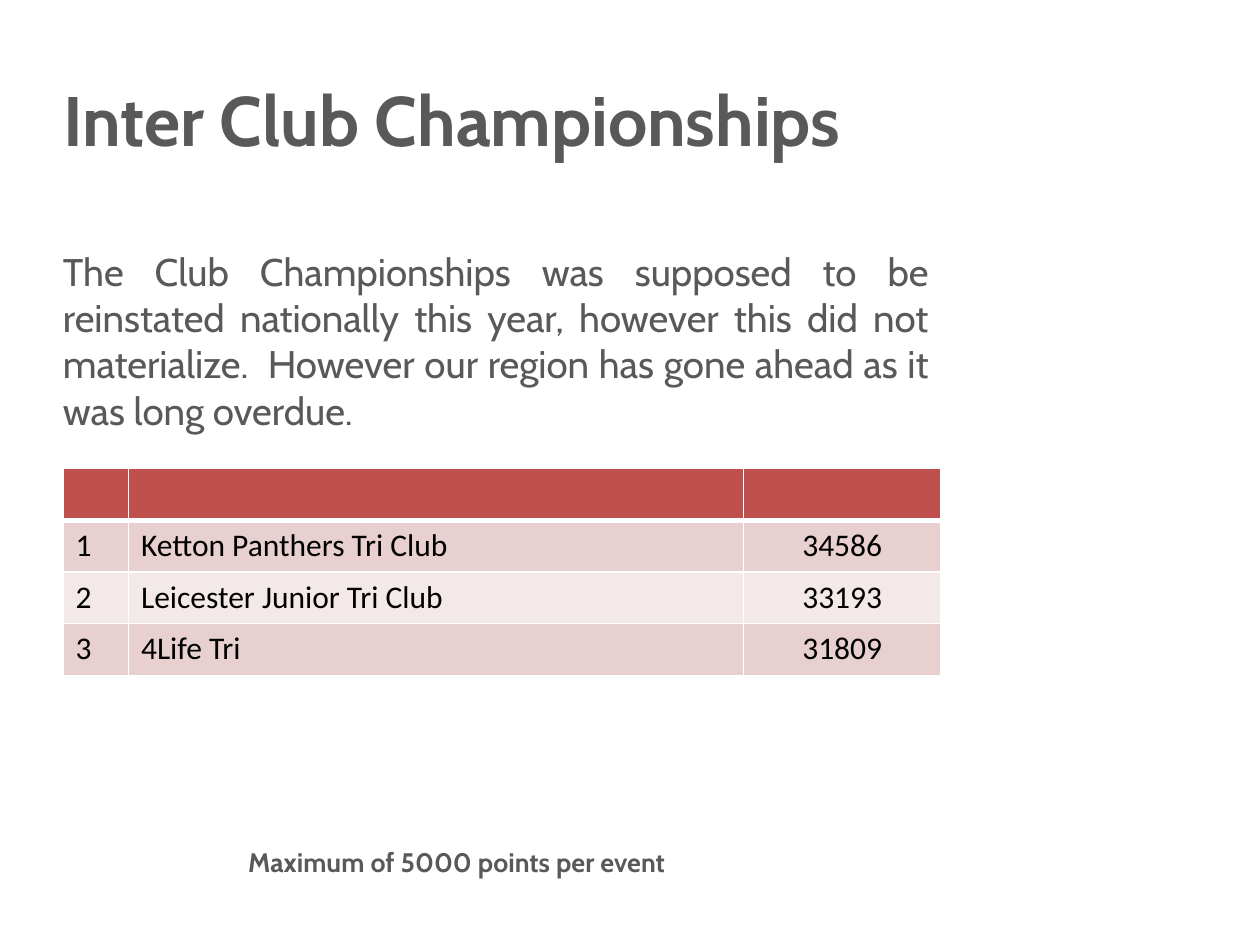
from lxml.etree import SubElement
from pptx import Presentation
from pptx.dml.color import RGBColor
from pptx.enum.text import MSO_ANCHOR, MSO_AUTO_SIZE, PP_ALIGN
from pptx.oxml.ns import qn
from pptx.util import Inches, Pt


def color(value):
    """Turn a hex string into a colour."""
    return RGBColor.from_string(value)


def write(frame, text, size=18, font="Cabin", ink="595959", bold=False,
          align=PP_ALIGN.LEFT, spacing=None):
    """Write one formatted paragraph into a text frame."""
    paragraph = frame.paragraphs[0]
    paragraph.alignment = align
    paragraph.line_spacing = spacing
    if not text:
        paragraph.font.size = Pt(size)
        return
    run = paragraph.add_run()
    run.text = text
    run.font.size = Pt(size)
    run.font.name = font
    run.font.bold = bold
    run.font.color.rgb = color(ink)


class SlideBuilder:
    """Hold the table style and the slide being built."""

    header_fill = "C0504D"
    band_fills = ("E8D0D0", "F4E9E9")
    border = "FFFFFF"

    def __init__(self, deck):
        """Add a title-only slide to the deck."""
        self.slide = deck.slides.add_slide(deck.slide_layouts[5])

    def frame_up(self, frame, anchor, left_inset):
        """Set the wrapping, anchor and left inset of a text frame."""
        frame.word_wrap = True
        frame.auto_size = MSO_AUTO_SIZE.NONE
        frame.vertical_anchor = anchor
        frame.margin_left = Inches(left_inset)

    def title(self, text, left, top, width, height):
        """Place and fill the title placeholder."""
        heading = self.slide.shapes.title
        heading.left, heading.top = Inches(left), Inches(top)
        heading.width, heading.height = Inches(width), Inches(height)
        self.frame_up(heading.text_frame, MSO_ANCHOR.MIDDLE, 0)
        write(heading.text_frame, text, size=40, bold=True, spacing=0.8)

    def text(self, text, left, top, width, height, left_inset=0.1, **style):
        """Add a wrapped text box."""
        box = self.slide.shapes.add_textbox(
            Inches(left), Inches(top), Inches(width), Inches(height))
        self.frame_up(box.text_frame, MSO_ANCHOR.TOP, left_inset)
        write(box.text_frame, text, **style)

    def rule(self, cell, edge, width):
        """Draw one border of a cell ahead of its fill."""
        properties = cell._tc.get_or_add_tcPr()
        line = SubElement(properties, qn(f"a:ln{edge}"), w=str(Pt(width)))
        fill = SubElement(line, qn("a:solidFill"))
        SubElement(fill, qn("a:srgbClr"), val=self.border)

    def table(self, rows, left, top, columns, row_height):
        """Add a banded table with a header row and a centred last column."""
        grid = self.slide.shapes.add_table(
            len(rows), len(columns), Inches(left), Inches(top),
            Inches(sum(columns)), Inches(row_height * len(rows))).table
        for column, width in zip(grid.columns, columns):
            column.width = Inches(width)
        for row_index, row in enumerate(rows):
            for column_index, value in enumerate(row):
                cell = grid.cell(row_index, column_index)
                for edge in "LRTB":
                    heavy = (row_index, edge) in ((0, "B"), (1, "T"))
                    self.rule(cell, edge, 3 if heavy else 1)
                cell.fill.solid()
                cell.fill.fore_color.rgb = color(
                    self.band_fills[(row_index - 1) % 2] if row_index
                    else self.header_fill)
                last = column_index == len(columns) - 1
                write(cell.text_frame, value, font="Calibri", ink="000000",
                      align=PP_ALIGN.CENTER if last else PP_ALIGN.LEFT)


def main():
    """Build the championship slide and save it."""
    deck = Presentation()
    deck.slide_width, deck.slide_height = Inches(10), Inches(7.5)
    page = SlideBuilder(deck)
    page.title("Inter Club Championships", 0.5, 0.38, 9, 1.25)
    page.text(
        "The Club Championships was supposed to be reinstated nationally this "
        "year, however this did not materialize.  However our region has gone "
        "ahead as it was long overdue.",
        0.5, 1.92, 6.97, 3.44, left_inset=0, size=22, align=PP_ALIGN.JUSTIFY)
    page.text("Maximum of 5000 points per event", 1.87, 6.66, 4.02, 0.39,
              size=15.3, bold=True)
    standings = [
        ("", "", ""),
        ("1", "Ketton Panthers Tri Club", "34586"),
        ("2", "Leicester Junior Tri Club", "33193"),
        ("3", "4Life Tri", "31809"),
    ]
    page.table(standings, 0.5, 3.72, (0.52, 4.88, 1.57), 0.41)
    deck.save("out.pptx")


if __name__ == "__main__":
    main()
